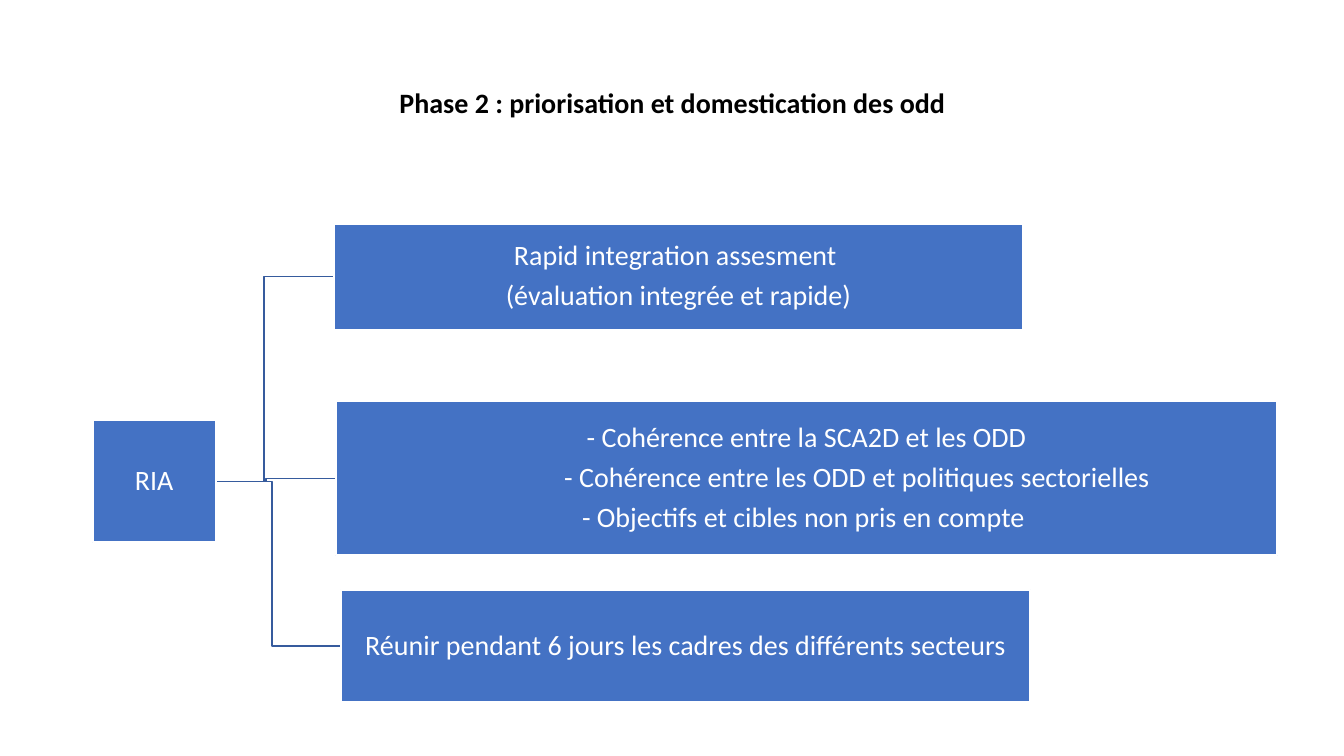
from dataclasses import dataclass
from pptx import Presentation as Deck
from pptx.dml.color import RGBColor as Rgb
from pptx.enum.shapes import MSO_SHAPE as Kind
from pptx.enum.text import MSO_ANCHOR as Anchor, MSO_AUTO_SIZE as Fit, PP_ALIGN as Align
from pptx.util import Inches, Pt


@dataclass(frozen=True)
class Theme:
    font: str = "Calibri"
    size: int = 20
    ink: str = "000000"
    paper: str = "FFFFFF"
    fill: str = "4472C4"
    wire: str = "365B9D"
    edge: float = 1.5
    thin: float = 1
    gap: int = 7
    lead: float = 0.9


def assign(item, values):
    for name, value in values.items():
        setattr(item, name, value)


class Page:
    def __init__(self, deck, theme):
        self.theme = theme
        self.slide = deck.slides.add_slide(deck.slide_layouts[5])
        self.col = deck.slide_width / 100
        self.row = deck.slide_height / 100

    def place(self, x, y, w, h):
        return [round(n) for n in (x * self.col, y * self.row, w * self.col, h * self.row)]

    def label(self, shape, lines, color, bold=False, pad=None):
        frame = shape.text_frame
        frame.text = "\n".join(lines)
        assign(frame, {"word_wrap": True, "auto_size": Fit.NONE, "vertical_anchor": Anchor.MIDDLE})
        if pad is not None:
            sides = ("left", "top", "right", "bottom")
            assign(frame, {f"margin_{side}": Inches(pad) for side in sides})
        for para in frame.paragraphs:
            assign(para, {"alignment": Align.CENTER, "line_spacing": self.theme.lead,
                          "space_before": Pt(0), "space_after": Pt(0)})
            for run in para.runs:
                assign(run.font, {"name": self.theme.font, "size": Pt(self.theme.size), "bold": bold})
                run.font.color.rgb = Rgb.from_string(color)
        for para in frame.paragraphs[:-1]:
            para.space_after = Pt(self.theme.gap)
        return frame

    def title(self, text, area):
        shape = self.slide.shapes.title
        assign(shape, dict(zip(("left", "top", "width", "height"), self.place(*area))))
        self.label(shape, [text], self.theme.ink, bold=True)

    def stroke(self, shape, color, width):
        shape.shadow.inherit = False
        shape.line.color.rgb = Rgb.from_string(color)
        shape.line.width = Pt(width)

    def box(self, area, lines):
        shape = self.slide.shapes.add_shape(Kind.RECTANGLE, *self.place(*area))
        shape.fill.solid()
        shape.fill.fore_color.rgb = Rgb.from_string(self.theme.fill)
        self.stroke(shape, self.theme.paper, self.theme.edge)
        return self.label(shape, lines, self.theme.paper, pad=0.01)

    def link(self, root, leaf, turn):
        start, end = root[0] + root[2], leaf[0]
        high, low = root[1] + root[3] / 2, leaf[1] + leaf[3] / 2
        spots = [(start, high), (turn, high), (turn, low), (end, low)]
        spots = [(round(x * self.col), round(y * self.row)) for x, y in spots]
        pen = self.slide.shapes.build_freeform(*spots[0])
        pen.add_line_segments(spots[1:], close=False)
        shape = pen.convert_to_shape()
        shape.fill.background()
        self.stroke(shape, self.theme.wire, self.theme.thin)


ROOT = (6.9, 55.6, 9.15, 16.13)
LEAVES = [
    ((24.83, 29.6, 51.3, 14), 19.65,
     ["Rapid integration assesment ", "(évaluation integrée et rapide)"]),
    ((24.98, 53.07, 70.07, 20.4), 19.8,
     ["- Cohérence entre la SCA2D et les ODD",
      "- Cohérence entre les ODD et politiques sectorielles",
      "- Objectifs et cibles non pris en compte "]),
    ((25.36, 78, 51.3, 14.93), 20.25,
     ["Réunir pendant 6 jours les cadres des différents secteurs"]),
]


def main():
    deck = Deck()
    assign(deck, {"slide_width": Inches(13.33), "slide_height": Inches(7.5)})
    page = Page(deck, Theme())
    page.title("Phase 2 : priorisation et domestication des odd", (4.8, 10.67, 90.47, 6.4))
    for area, turn, lines in reversed(LEAVES):
        page.link(ROOT, area, turn)
    page.box(ROOT, ["RIA"])
    frames = [page.box(area, lines) for area, turn, lines in LEAVES]
    inset = frames[1].paragraphs[1]._p.get_or_add_pPr()
    inset.set("marL", str(Inches(1)))
    inset.set("indent", "0")
    deck.save("out.pptx")


if __name__ == "__main__":
    main()
